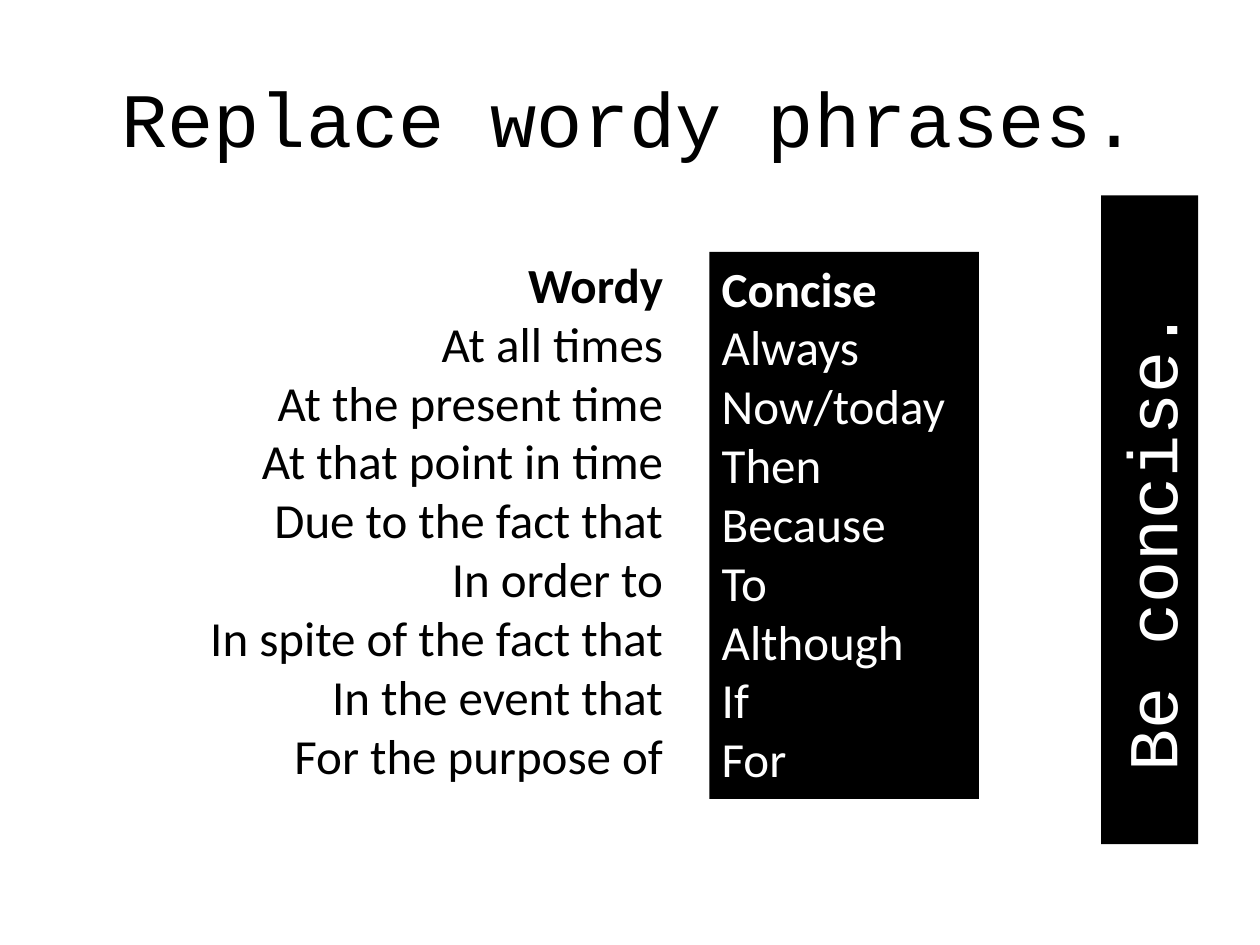
from pptx import Presentation
from pptx.dml.color import RGBColor
from pptx.enum.text import MSO_ANCHOR, MSO_AUTO_SIZE, PP_ALIGN
from pptx.util import Inches, Pt

BLACK = RGBColor(0x00, 0x00, 0x00)
WHITE = RGBColor(0xFF, 0xFF, 0xFF)
BODY_FONT = "Calibri"
DISPLAY_FONT = "Courier New"

PHRASES = [
    ("Wordy", "Concise"),
    ("At all times", "Always"),
    ("At the present time", "Now/today"),
    ("At that point in time", "Then"),
    ("Due to the fact that", "Because"),
    ("In order to", "To"),
    ("In spite of the fact that", "Although"),
    ("In the event that", "If"),
    ("For the purpose of", "For"),
]


def format_paragraph(paragraph, font_name, size, color, alignment, bold=False):
    paragraph.alignment = alignment
    font = paragraph.font
    font.name = font_name
    font.size = Pt(size)
    font.color.rgb = color
    font.bold = bold


def add_text_panel(slide, box, fill=None):
    panel = slide.shapes.add_textbox(*map(Inches, box))
    panel.text_frame.word_wrap = True
    panel.text_frame.auto_size = MSO_AUTO_SIZE.SHAPE_TO_FIT_TEXT
    if fill is not None:
        panel.fill.solid()
        panel.fill.fore_color.rgb = fill
    return panel


def place_title(slide, box, text):
    title = slide.shapes.title
    title.left, title.top, title.width, title.height = map(Inches, box)
    title.text_frame.text = text
    title.text_frame.vertical_anchor = MSO_ANCHOR.MIDDLE
    format_paragraph(title.text_frame.paragraphs[0], DISPLAY_FONT, 44, BLACK,
                     PP_ALIGN.CENTER)


def add_phrase_column(slide, box, lines, color, alignment, fill=None):
    """Add a column of phrases whose first line is a bold heading."""
    panel = add_text_panel(slide, box, fill)
    panel.text_frame.text = "\n".join(lines)
    for index, paragraph in enumerate(panel.text_frame.paragraphs):
        format_paragraph(paragraph, BODY_FONT, 28, color, alignment,
                         bold=index == 0)


def add_side_banner(slide, box, text):
    """Add a banner that reads upwards; box is given before rotation."""
    banner = add_text_panel(slide, box, BLACK)
    banner.rotation = 270
    banner.text_frame.text = text
    format_paragraph(banner.text_frame.paragraphs[0], DISPLAY_FONT, 40, WHITE,
                     PP_ALIGN.CENTER)


def main():
    presentation = Presentation()
    presentation.slide_width = Inches(10)
    presentation.slide_height = Inches(7.5)
    title_only = presentation.slide_layouts[5]
    slide = presentation.slides.add_slide(title_only)

    wordy, concise = zip(*PHRASES)
    place_title(slide, (0.5, 0.3, 9, 1.25), "Replace wordy phrases.")
    add_phrase_column(slide, (1.09, 1.97, 4.27, 4.34), wordy, BLACK,
                      PP_ALIGN.RIGHT)
    add_phrase_column(slide, (5.63, 2, 2.14, 4.34), concise, WHITE,
                      PP_ALIGN.LEFT, fill=BLACK)
    add_side_banner(slide, (6.55, 3.74, 5.15, 0.77), "Be concise. ")

    presentation.save("out.pptx")


if __name__ == "__main__":
    main()
